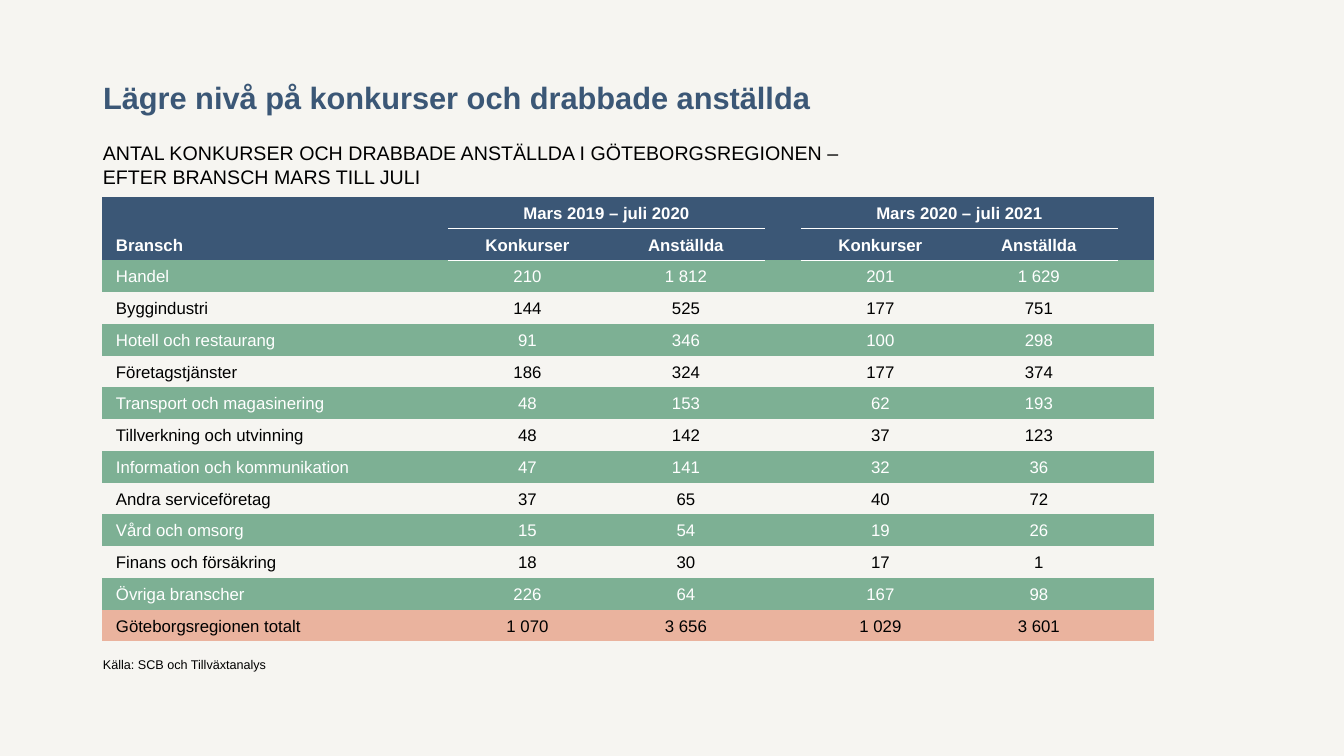
from lxml import etree
from pptx import Presentation
from pptx import util as u
from pptx.dml.color import RGBColor
from pptx.enum import text
from pptx.oxml import ns

COLOURS = {"paper": "F6F5F1", "navy": "3B5776", "green": "7DB094",
           "salmon": "EAB39E", "black": "000000", "white": "FFFFFF"}
NO_STYLE = "{2D5ABB26-0587-4C30-8999-92F81FD0307C}"
COLUMN_WIDTHS = [346, 159, 158, 36, 159, 158, 36]
GROUPS = {1: "Mars 2019 – juli 2020", 4: "Mars 2020 – juli 2021"}
HEADINGS = ["Bransch", "Konkurser", "Anställda", "Konkurser", "Anställda"]
INDUSTRIES = [
    ("Handel", "210", "1 812", "201", "1 629"),
    ("Byggindustri", "144", "525", "177", "751"),
    ("Hotell och restaurang", "91", "346", "100", "298"),
    ("Företagstjänster", "186", "324", "177", "374"),
    ("Transport och magasinering", "48", "153", "62", "193"),
    ("Tillverkning och utvinning", "48", "142", "37", "123"),
    ("Information och kommunikation", "47", "141", "32", "36"),
    ("Andra serviceföretag", "37", "65", "40", "72"),
    ("Vård och omsorg", "15", "54", "19", "26"),
    ("Finans och försäkring", "18", "30", "17", "1"),
    ("Övriga branscher", "226", "64", "167", "98"),
]
TOTAL = ("Göteborgsregionen totalt", "1 070", "3 656", "1 029", "3 601")


def px(length):
    return u.Inches(length / 100.8)


class BankruptcySlide:
    """Holds the slide and its style, and adds each kind of element."""

    font = "Arial"

    def __init__(self, presentation):
        self.slide = presentation.slides.add_slide(presentation.slide_layouts[5])
        fill = self.slide.background.fill
        fill.solid()
        fill.fore_color.rgb = self.colour("paper")

    def colour(self, name):
        return RGBColor.from_string(COLOURS[name])

    def set_words(self, frame, words, size, colour, bold=False, align=text.PP_ALIGN.LEFT):
        frame.text = words
        paragraph = frame.paragraphs[0]
        paragraph.alignment = align
        for run in paragraph.runs:
            run.font.name = self.font
            run.font.size = u.Pt(size)
            run.font.bold = bold
            run.font.color.rgb = self.colour(colour)
        return paragraph

    def place(self, shape, left, top, width, height, anchor):
        shape.left, shape.top = px(left), px(top)
        shape.width, shape.height = px(width), px(height)
        frame = shape.text_frame
        frame.word_wrap = True
        frame.auto_size = text.MSO_AUTO_SIZE.NONE
        frame.vertical_anchor = anchor
        return frame

    def title(self, words, *box):
        frame = self.place(self.slide.shapes.title, *box, text.MSO_ANCHOR.BOTTOM)
        self.set_words(frame, words, 22, "navy", bold=True).line_spacing = u.Pt(31)

    def label(self, words, size, *box, anchor=text.MSO_ANCHOR.TOP):
        shape = self.slide.shapes.add_textbox(0, 0, 0, 0)
        self.set_words(self.place(shape, *box, anchor), words, size, "black")

    def table(self, left, top, height, rows):
        frame = self.slide.shapes.add_table(rows, len(COLUMN_WIDTHS), px(left), px(top),
                                            px(sum(COLUMN_WIDTHS)), px(height))
        table = frame.table
        table.first_row = table.horz_banding = False
        table._tbl.tblPr.find(ns.qn("a:tableStyleId")).text = NO_STYLE
        for column, width in zip(table.columns, COLUMN_WIDTHS):
            column.width = px(width)
        return table

    def row(self, table, index, words, colour, fill=None, bold=False):
        for column in range(len(COLUMN_WIDTHS)):
            cell = table.cell(index, column)
            cell.margin_top = cell.margin_bottom = 0
            cell.margin_left = px(5 if column else 14)
            cell.margin_right = px(5)
            cell.vertical_anchor = text.MSO_ANCHOR.MIDDLE
            if fill:
                cell.fill.solid()
                cell.fill.fore_color.rgb = self.colour(fill)
            else:
                cell.fill.background()
            if column in words:
                align = text.PP_ALIGN.CENTER if column else text.PP_ALIGN.LEFT
                paragraph = self.set_words(cell.text_frame, words[column], 12, colour, bold, align)
                paragraph.line_spacing = 1.07

    def rule(self, cell, side):
        properties = cell._tc.get_or_add_tcPr()
        line = etree.Element(ns.qn(f"a:{side}"), w=str(u.Pt(1)))
        solid = etree.SubElement(line, ns.qn("a:solidFill"))
        etree.SubElement(solid, ns.qn("a:srgbClr"), val=COLOURS["white"])
        properties.insert(0, line)


def main():
    presentation = Presentation()
    presentation.slide_width, presentation.slide_height = px(1344), px(756)
    page = BankruptcySlide(presentation)
    page.title("Lägre nivå på konkurser och drabbade anställda", 93, 40, 1159, 81)
    page.label("ANTAL KONKURSER OCH DRABBADE ANSTÄLLDA I GÖTEBORGSREGIONEN – "
               "EFTER BRANSCH MARS TILL JULI", 14, 93, 136, 760, 51)
    page.label("Källa: SCB och Tillväxtanalys", 9, 93, 652, 1088, 25,
               anchor=text.MSO_ANCHOR.BOTTOM)

    def by_column(values):
        return dict(zip((0, 1, 2, 4, 5), values))

    table = page.table(102, 197, 445, len(INDUSTRIES) + 3)
    page.row(table, 0, GROUPS, "white", "navy", bold=True)
    page.row(table, 1, by_column(HEADINGS), "white", "navy", bold=True)
    for index, industry in enumerate(INDUSTRIES):
        colour, fill = ("black", None) if index % 2 else ("white", "green")
        page.row(table, index + 2, by_column(industry), colour, fill)
    page.row(table, len(INDUSTRIES) + 2, by_column(TOTAL), "black", "salmon")
    for first in GROUPS:
        table.cell(0, first).merge(table.cell(0, first + 1))
        for column in (first, first + 1):
            page.rule(table.cell(0, column), "lnB")
            page.rule(table.cell(1, column), "lnT")
    presentation.save("out.pptx")


if __name__ == "__main__":
    main()
